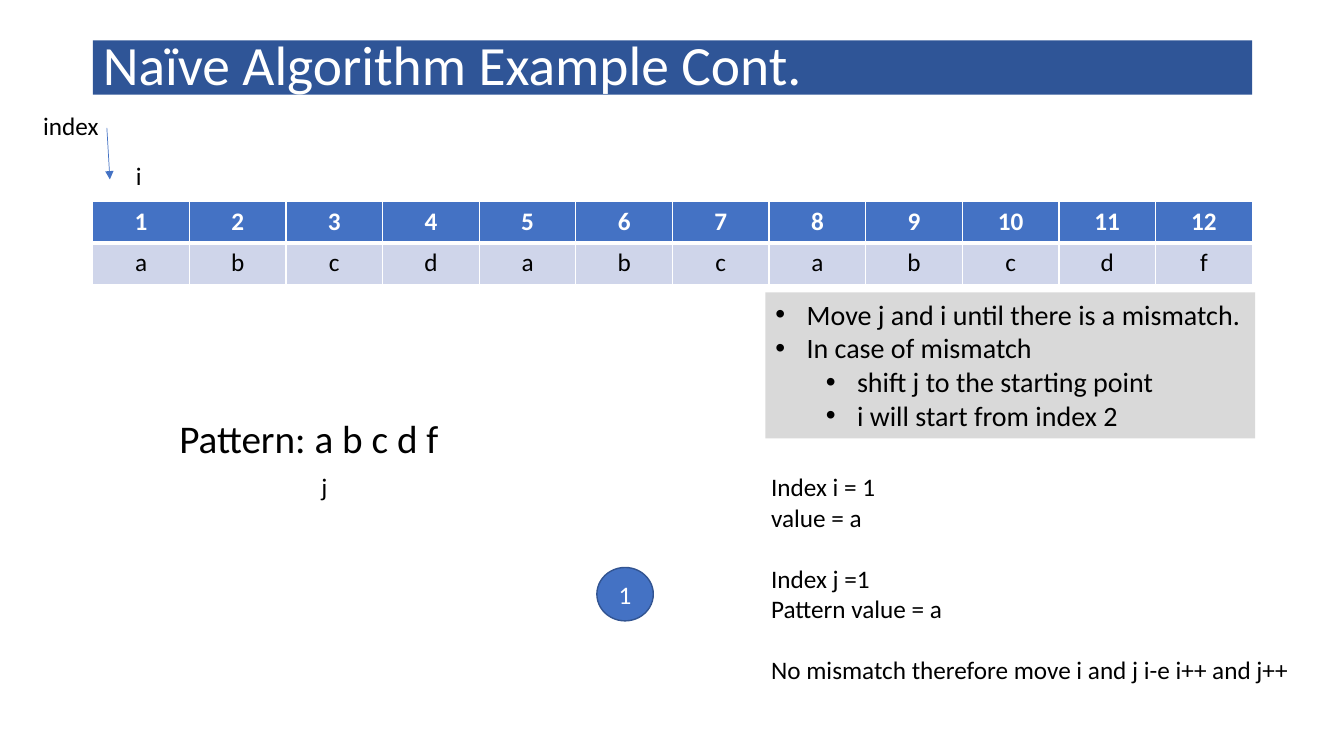
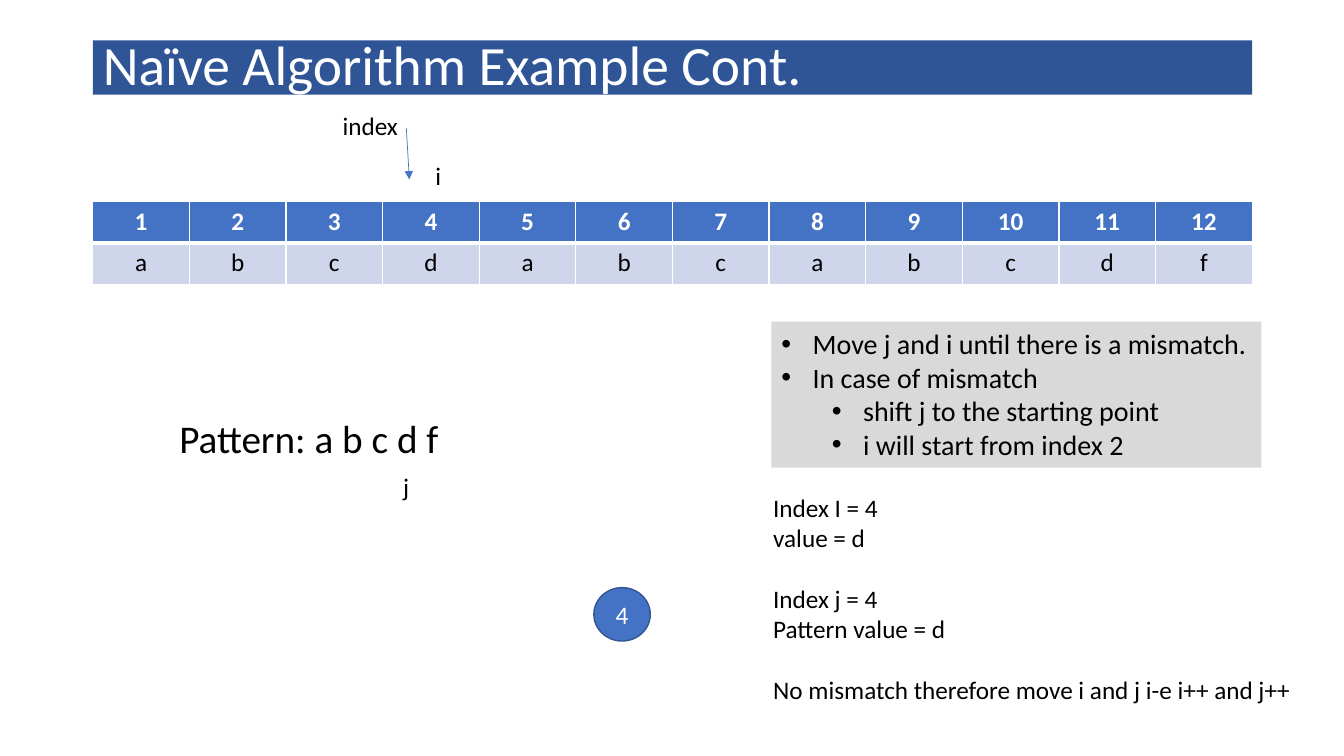
"""Build two slides that trace the naïve pattern matching algorithm."""
from dataclasses import dataclass

from lxml import etree
from pptx import Presentation
from pptx.dml.color import RGBColor
from pptx.enum.shapes import MSO_CONNECTOR, MSO_SHAPE
from pptx.enum.text import MSO_ANCHOR, MSO_AUTO_SIZE, PP_ALIGN
from pptx.oxml.ns import qn
from pptx.util import Pt

PX = 9144
LEFT, CENTER = PP_ALIGN.LEFT, PP_ALIGN.CENTER
MIDDLE, TOP = MSO_ANCHOR.MIDDLE, MSO_ANCHOR.TOP
NO_FIT = MSO_AUTO_SIZE.NONE
STRAIGHT = MSO_CONNECTOR.STRAIGHT
OVAL = MSO_SHAPE.OVAL


@dataclass(frozen=True)
class Theme:
    font: str = "Calibri"
    title_size: float = 39.6
    pattern_size: int = 28
    list_size: int = 20
    text_size: int = 18
    group_gap: int = 22
    band: str = "2F5597"
    accent: str = "4472C4"
    accent_line: str = "325491"
    row: str = "CFD5EA"
    panel: str = "D9D9D9"
    light: str = "FFFFFF"
    dark: str = "000000"


@dataclass(frozen=True)
class Step:
    number: str
    index_x: int
    j_x: int
    rules_at: tuple
    trace_at: tuple
    badge_at: tuple
    trace: tuple


THEME = Theme()
TITLE = "Naïve Algorithm Example Cont."
TEXT = "abcdabcabcdf"
PATTERN = "Pattern: a b c d f"
RULES = (
    (0, "Move j and i until there is a mismatch."),
    (0, "In case of mismatch"),
    (1, "shift j to the starting point"),
    (1, "i will start from index 2"),
)
ADVANCE = ("No mismatch therefore move i and j i-e i++ and j++",)
STEPS = (
    Step("1", 33, 309, (759, 290), (755, 463), (592, 563),
         (("Index i = 1", "value = a"),
          ("Index j =1", "Pattern value = a"), ADVANCE)),
    Step("4", 330, 390, (765, 319), (757, 483), (589, 583),
         (("Index I = 4", "value = d"),
          ("Index j = 4", "Pattern value = d"), ADVANCE)),
)


def px(*lengths):
    return [length * PX for length in lengths]


def rgb(value):
    return RGBColor.from_string(value)


def paint(sp, color):
    sp.fill.solid()
    sp.fill.fore_color.rgb = rgb(color)


def place(sp, x, y, w, h):
    sp.left, sp.top, sp.width, sp.height = px(x, y, w, h)


def style(p, size, color=THEME.dark, align=LEFT, bold=False):
    p.alignment = align
    for r in p.runs:
        r.font.name = THEME.font
        r.font.size = Pt(size)
        r.font.bold = bold
        r.font.color.rgb = rgb(color)


def next_paragraph(tf, number):
    return tf.add_paragraph() if number else tf.paragraphs[0]


def set_title(slide):
    sp = slide.shapes.title
    place(sp, 92, 40, 1150, 54)
    paint(sp, THEME.band)
    tf = sp.text_frame
    tf.text = TITLE
    tf.auto_size = NO_FIT
    tf.vertical_anchor = MIDDLE
    p = tf.paragraphs[0]
    p.line_spacing = 0.9
    style(p, THEME.title_size, THEME.light)


def add_bullet(p, level):
    pPr = p._p.get_or_add_pPr()
    pPr.set("marL", str((31 + 50 * level) * PX))
    pPr.set("indent", str(-31 * PX))
    etree.SubElement(pPr, qn("a:buFont"), typeface="Arial")
    etree.SubElement(pPr, qn("a:buChar"), char="•")


def set_rules(slide, x, y):
    sp = slide.placeholders[1]
    place(sp, x, y, 486, 145)
    paint(sp, THEME.panel)
    tf = sp.text_frame
    tf.auto_size = NO_FIT
    tf.word_wrap = False
    tf.vertical_anchor = TOP
    for number, (level, text) in enumerate(RULES):
        p = next_paragraph(tf, number)
        p.text = text
        p.level = level
        add_bullet(p, level)
        p.space_before = Pt(0)
        style(p, THEME.list_size)


def add_label(slide, text, x, y, w, h=40, size=THEME.text_size):
    tf = slide.shapes.add_textbox(*px(x, y, w, h)).text_frame
    tf.word_wrap = False
    tf.text = text
    style(tf.paragraphs[0], size)


def add_trace(slide, groups, x, y):
    tf = slide.shapes.add_textbox(*px(x, y, 539, 252)).text_frame
    tf.word_wrap = False
    number = 0
    for group in groups:
        for line, text in enumerate(group):
            p = next_paragraph(tf, number)
            p.text = text
            if number and not line:
                p.space_before = Pt(THEME.group_gap)
            style(p, THEME.text_size)
            number += 1


def add_border(cell, side, width):
    tcPr = cell._tc.get_or_add_tcPr()
    ln = etree.SubElement(tcPr, qn(f"a:ln{side}"), w=str(Pt(width)))
    fill = etree.SubElement(ln, qn("a:solidFill"))
    etree.SubElement(fill, qn("a:srgbClr"), val=THEME.light)


def add_text_table(slide):
    rows = ([str(n) for n in range(1, len(TEXT) + 1)], TEXT)
    looks = ((THEME.accent, THEME.light, True), (THEME.row, THEME.dark, False))
    frame = slide.shapes.add_table(2, len(TEXT), *px(92, 200, 1150, 82))
    for row, (values, (fill, color, bold)) in enumerate(zip(rows, looks)):
        divider = "T" if row else "B"
        for col, value in enumerate(values):
            cell = frame.table.cell(row, col)
            for side in "LRTB":
                add_border(cell, side, 3 if side == divider else 1)
            paint(cell, fill)
            cell.text = value
            style(cell.text_frame.paragraphs[0], THEME.text_size, color,
                  CENTER, bold)


def add_arrow(slide, x1, y1, x2, y2):
    sp = slide.shapes.add_connector(STRAIGHT, *px(x1, y1, x2, y2))
    sp.line.color.rgb = rgb(THEME.accent)
    sp.line.width = Pt(0.5)
    etree.SubElement(sp.get_or_add_ln(), qn("a:tailEnd"), type="triangle")
    etree.SubElement(sp._element.spPr, qn("a:effectLst"))


def add_index_marker(slide, x):
    add_label(slide, "index", x, 105, 76)
    add_arrow(slide, x + 73, 127, x + 76, 178)
    add_label(slide, "i", x + 92, 154, 26)


def add_badge(slide, text, x, y):
    sp = slide.shapes.add_shape(OVAL, *px(x, y, 56, 53))
    sp.shadow.inherit = False
    paint(sp, THEME.accent)
    sp.line.color.rgb = rgb(THEME.accent_line)
    sp.line.width = Pt(1)
    tf = sp.text_frame
    tf.text = text
    tf.vertical_anchor = MIDDLE
    style(tf.paragraphs[0], THEME.text_size, THEME.light, CENTER)


def add_step(prs, step):
    slide = prs.slides.add_slide(prs.slide_layouts[1])
    set_title(slide)
    add_text_table(slide)
    add_index_marker(slide, step.index_x)
    add_label(slide, PATTERN, 168, 406, 375, 57, THEME.pattern_size)
    add_label(slide, "j", step.j_x, 463, 26)
    set_rules(slide, *step.rules_at)
    add_trace(slide, step.trace, *step.trace_at)
    add_badge(slide, step.number, *step.badge_at)


def main():
    prs = Presentation()
    prs.slide_width, prs.slide_height = px(1333, 750)
    for step in STEPS:
        add_step(prs, step)
    prs.save("out.pptx")


if __name__ == "__main__":
    main()
